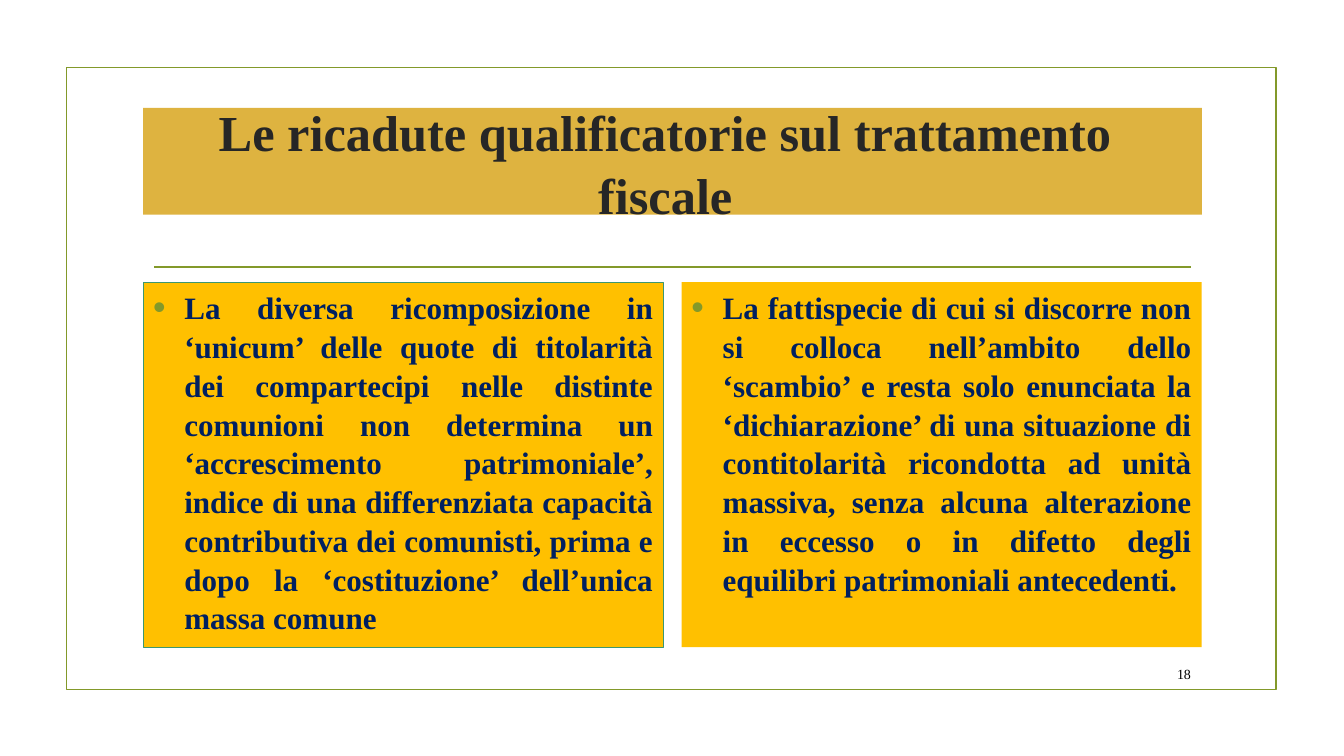
from lxml.etree import SubElement
from pptx import Presentation
from pptx.dml.color import RGBColor
from pptx.enum.shapes import MSO_CONNECTOR, MSO_SHAPE
from pptx.enum.text import MSO_ANCHOR, PP_ALIGN
from pptx.oxml.ns import qn
from pptx.util import Inches, Pt

GREEN, AMBER = "83992A", "FFC000"


def color(value):
    return RGBColor.from_string(value)


def add_box(x, y, w, h, text="", fill=None, line=None, weight=1.25, size=10,
            ink="000000", bold=False, align=PP_ALIGN.LEFT,
            anchor=MSO_ANCHOR.MIDDLE, right=0.1, spacing=1.0, bullet=None):
    sp = s.shapes.add_shape(MSO_SHAPE.RECTANGLE, Inches(x), Inches(y),
                            Inches(w), Inches(h))
    sp.shadow.inherit = False
    if fill:
        sp.fill.solid()
        sp.fill.fore_color.rgb = color(fill)
    else:
        sp.fill.background()
    if line:
        sp.line.color.rgb = color(line)
        sp.line.width = Pt(weight)
    else:
        sp.line.fill.background()
    if not text:
        return
    tf = sp.text_frame
    tf.word_wrap = True
    tf.vertical_anchor = anchor
    tf.margin_right = Inches(right)
    p = tf.paragraphs[0]
    p.alignment = align
    p.line_spacing = spacing
    if bullet:
        pPr = p._p.get_or_add_pPr()
        pPr.set("marL", str(Inches(0.31)))
        pPr.set("indent", str(-Inches(0.31)))
        buClr = SubElement(pPr, qn("a:buClr"))
        SubElement(buClr, qn("a:srgbClr"), val=bullet)
        SubElement(pPr, qn("a:buSzPct"), val="115000")
        SubElement(pPr, qn("a:buFont"), typeface="Arial")
        SubElement(pPr, qn("a:buChar"), char="•")
    r = p.add_run()
    r.text = text
    r.font.name = "Times New Roman"
    r.font.size = Pt(size)
    r.font.bold = bold
    r.font.color.rgb = color(ink)


prs = Presentation()
prs.slide_width, prs.slide_height = Inches(13.33), Inches(7.5)
s = prs.slides.add_slide(prs.slide_layouts[6])

# Content grid: two columns with a gutter
left, width, gutter = 1.42, 10.5, 0.18
col_w = (width - gutter) / 2

# Frame and rule under the title
add_box(0.66, 0.67, 12, 6.17, line=GREEN)
rule = s.shapes.add_connector(MSO_CONNECTOR.STRAIGHT, Inches(1.53),
                              Inches(2.65), Inches(11.81), Inches(2.65))
rule.line.color.rgb = color(GREEN)
rule.line.width = Pt(1.25)
SubElement(rule._element.spPr, qn("a:effectLst"))

# Title
add_box(left, 1.07, width, 1.06,
        "Le ricadute qualificatorie sul trattamento fiscale",
        fill="DEB340", size=36, ink="262626", bold=True,
        align=PP_ALIGN.CENTER, right=0.24, spacing=1.04)

# Two columns of text
columns = [
    ("La diversa ricomposizione in ‘unicum’ delle quote di titolarità dei "
     "compartecipi nelle distinte comunioni non determina un ‘accrescimento "
     "patrimoniale’, indice di una differenziata capacità contributiva dei "
     "comunisti, prima e dopo la ‘costituzione’ dell’unica massa comune",
     "3C9770"),
    ("La fattispecie di cui si discorre non si colloca nell’ambito dello "
     "‘scambio’ e resta solo enunciata la ‘dichiarazione’ di una situazione "
     "di contitolarità ricondotta ad unità massiva, senza alcuna alterazione "
     "in eccesso o in difetto degli equilibri patrimoniali antecedenti.",
     None),
]
for i, (text, border) in enumerate(columns):
    add_box(left + i * (col_w + gutter), 2.8, col_w, 3.62, text,
            fill=AMBER, line=border, weight=0.75, size=22.2, ink="002060",
            bold=True, align=PP_ALIGN.JUSTIFY, anchor=MSO_ANCHOR.TOP,
            spacing=1.04, bullet=GREEN)

# Slide number
add_box(11.32, 6.53, 0.59, 0.31, "18", align=PP_ALIGN.RIGHT)

prs.save("out.pptx")
